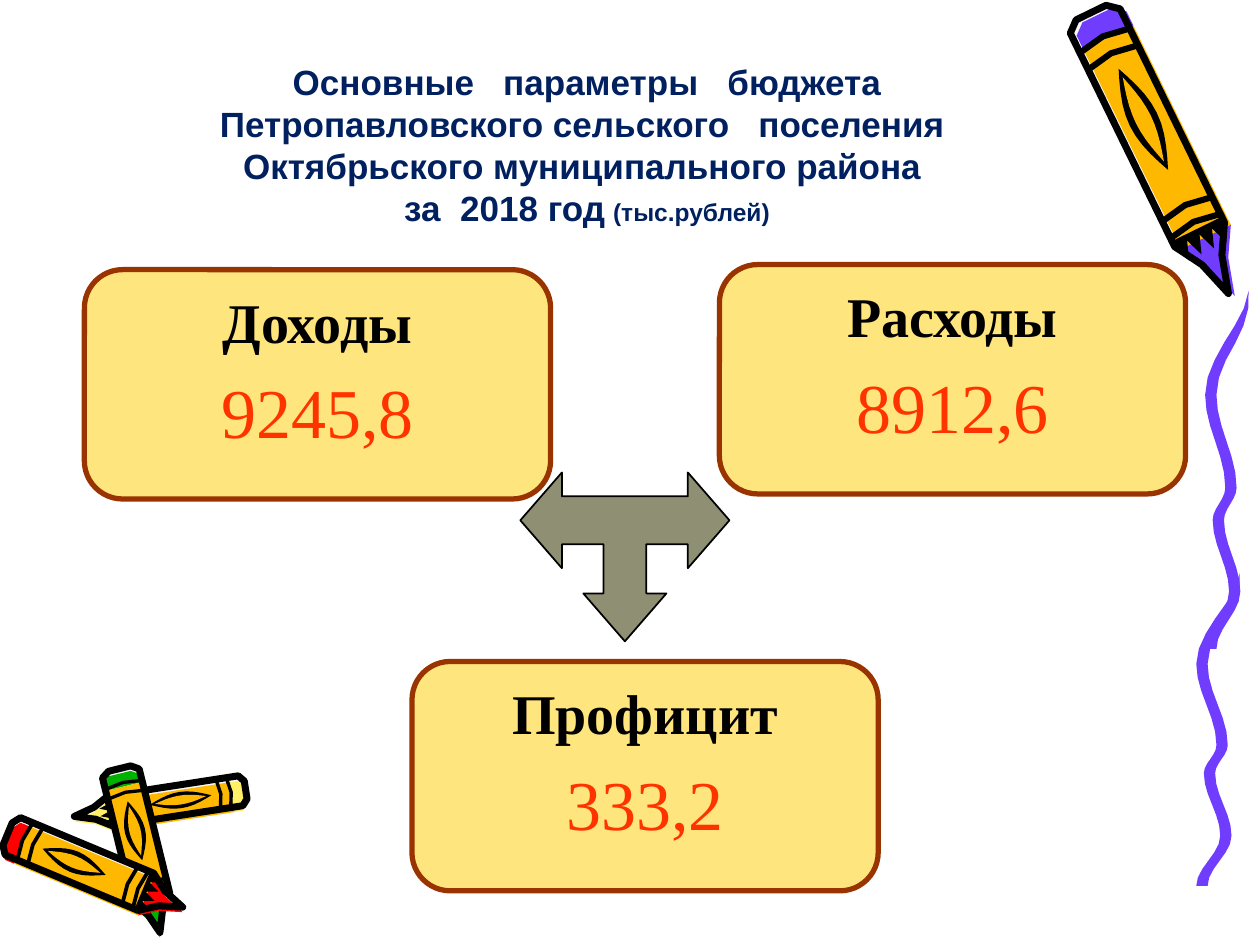
from math import cos, hypot, pi, sin

from lxml import etree
from pptx import Presentation
from pptx.dml.color import RGBColor
from pptx.enum.shapes import MSO_SHAPE
from pptx.enum.text import MSO_ANCHOR, PP_ALIGN
from pptx.oxml.ns import qn
from pptx.util import Inches, Pt

ROUND_RECT = MSO_SHAPE.ROUNDED_RECTANGLE
CENTER = PP_ALIGN.CENTER
TOP, BOTTOM = MSO_ANCHOR.TOP, MSO_ANCHOR.BOTTOM

BLACK = RGBColor(0x00, 0x00, 0x00)
WHITE = RGBColor(0xF8, 0xF8, 0xF8)
PURPLE = RGBColor(0x70, 0x3D, 0xFF)
ORANGE = RGBColor(0xFF, 0xB8, 0x00)
CREAM = RGBColor(0xFF, 0xEF, 0x66)
RED = RGBColor(0xFF, 0x00, 0x00)
GREEN = RGBColor(0x00, 0xB2, 0x00)
NAVY = RGBColor(0x00, 0x20, 0x60)
GOLD = RGBColor(0xFF, 0xCC, 0x00)
BROWN = RGBColor(0x99, 0x33, 0x00)
SCARLET = RGBColor(0xFF, 0x33, 0x00)
OLIVE = RGBColor(0x33, 0x33, 0x00)

TITLE_LINES = [
    "Основные   параметры   бюджета",
    "Петропавловского сельского   поселения  Октябрьского муниципального района ",
    "за  2018 год",
]

# Crayon parts: share of the length from the tail, share of the width from the axis.
BARREL_START, BARREL_END = 0.08, 0.79
BANDS = (0.09, 0.15, 0.69, 0.75)
LABEL_START, LABEL_LENGTH = 0.2, 0.36

# Squiggle turning points: share of the height, inches from the left edge.
TURNS = [(0, 0.35), (0.29, 0.05), (0.55, 0.21), (0.64, 0.11), (0.84, 0.24), (1, 0.05)]


def mirrored(half):
    """Close a half outline with its reflection across the axis (second value)."""
    return half + [(a, -c) for a, c in reversed(half)]


def crayon_band(a, bulge=0.015, thickness=0.02):
    near = [(a, -0.5), (a - bulge, 0), (a, 0.5)]
    return near + [(along + thickness, c) for along, c in reversed(near)]


def crayon_label(half_width, inset=0, steps=10):
    """Leaf shape that swells and narrows as a sine."""
    length = LABEL_LENGTH - 2 * inset
    return mirrored([(LABEL_START + inset + length * i / steps,
                      half_width * sin(pi * i / steps)) for i in range(steps + 1)])


def crayon_teeth(count=4, depth=0.06):
    """Zigzag shading where the barrel meets the nib."""
    steps = 2 * count
    edge = [(BARREL_END + depth * (i % 2), i / steps - 0.5) for i in range(steps + 1)]
    return edge + [(BARREL_END - 0.02, 0.5), (BARREL_END - 0.02, -0.5)]


CRAYON_TAIL = mirrored([(0, 0.3), (0.03, 0.5), (BARREL_START, 0.5)])
CRAYON_BARREL = mirrored([(BARREL_START, 0.5), (BARREL_END, 0.5)])
CRAYON_NIB = mirrored([(BARREL_END, 0.5), (0.88, 0.2), (1, 0)])
CRAYON_OUTLINE = mirrored([(0, 0.3), (0.03, 0.5), (BARREL_END, 0.5), (0.88, 0.2), (1, 0)])


class SlideBuilder:
    heading_font = "Arial"
    box_font = "Times New Roman"
    box_size = (3.7, 1.82)
    ink_width = 4

    def __init__(self, slide):
        self.shapes = slide.shapes

    def paint(self, sp, fill=None, alpha=None, line=None, width=1):
        """Set fill, outline and optional fill opacity in percent."""
        sp.shadow.inherit = False
        if fill is None:
            sp.fill.background()
        else:
            sp.fill.solid()
            sp.fill.fore_color.rgb = fill
        if alpha:
            color = sp.fill._xPr.find(qn("a:solidFill"))[0]
            etree.SubElement(color, qn("a:alpha"), val=str(alpha * 1000))
        if line is None:
            sp.line.fill.background()
        else:
            sp.line.color.rgb = line
            sp.line.width = Pt(width)

    def outline(self, points, **style):
        start, *rest = [(Inches(x), Inches(y)) for x, y in points]
        fb = self.shapes.build_freeform(*start)
        fb.add_line_segments(rest, close=True)
        self.paint(fb.convert_to_shape(), **style)

    def crayon(self, tail, tip, width, color, shift):
        """Draw a crayon whose colours sit off its ink outline by shift."""
        (x0, y0), (x1, y1) = tail, tip
        dx, dy = x1 - x0, y1 - y0
        across = width / hypot(dx, dy)

        def place(part, offset=(0, 0)):
            return [(x0 + a * dx - c * across * dy + offset[0],
                     y0 + a * dy + c * across * dx + offset[1]) for a, c in part]

        self.outline(place(CRAYON_OUTLINE), fill=WHITE)
        for part, fill in ((CRAYON_TAIL, color), (CRAYON_BARREL, ORANGE), (CRAYON_NIB, color)):
            self.outline(place(part, shift), fill=fill)
        for part in (*map(crayon_band, BANDS), crayon_teeth(), crayon_label(0.27)):
            self.outline(place(part), fill=BLACK)
        self.outline(place(crayon_label(0.15, inset=0.03)), fill=ORANGE)
        self.outline(place(CRAYON_OUTLINE), line=BLACK, width=self.ink_width)

    def squiggle(self, left, top, height, half_width=0.045, steps=6):
        """Draw a ribbon that eases between the turning points and starts as a point."""
        middle = []
        for (t0, x0), (t1, x1) in zip(TURNS, TURNS[1:]):
            for i in range(steps):
                ease = (1 - cos(pi * i / steps)) / 2
                middle.append((t0 + (t1 - t0) * i / steps, x0 + (x1 - x0) * ease))
        middle.append(TURNS[-1])

        def edge(side):
            return [(left + x + side * half_width * min(1, 8 * t), top + height * t)
                    for t, x in middle]

        self.outline(edge(-1) + edge(1)[::-1], fill=PURPLE)

    def three_way_arrow(self, center, top):
        """Draw an arrow pointing left, right and down, symmetric about its centre."""
        arm, head, reach = 0.5, 0.38, 0.83
        stem, stem_head, bottom = 0.17, 0.33, 1.34
        right = [(bottom, 0), (bottom - head, stem_head), (bottom - head, stem),
                 (head * 1.5, stem), (head * 1.5, arm), (head * 2, arm),
                 (head, reach), (0, arm), (head / 2, arm)]
        self.outline([(center + x, top + y) for y, x in mirrored(right)],
                     fill=OLIVE, alpha=55, line=BLACK)

    def run(self, p, text, font, size, color, bold):
        r = p.add_run()
        r.text = text
        r.font.name = font
        r.font.size = Pt(size)
        r.font.color.rgb = color
        r.font.bold = bold

    def title(self, x, y, w, h, lines, unit):
        tf = self.shapes.add_textbox(*map(Inches, (x, y, w, h))).text_frame
        tf.word_wrap = True
        tf.vertical_anchor = BOTTOM
        p = tf.paragraphs[0]
        p.alignment = CENTER
        for i, text in enumerate(lines):
            if i:
                p.add_line_break()
            self.run(p, text, self.heading_font, 20, NAVY, True)
        for text, size in ((" ", 16), (unit, 14)):
            self.run(p, text, self.heading_font, size, NAVY, True)

    def amount_box(self, x, y, label, amount):
        sp = self.shapes.add_shape(ROUND_RECT, *map(Inches, (x, y, *self.box_size)))
        self.paint(sp, fill=GOLD, alpha=51, line=BROWN, width=3)
        tf = sp.text_frame
        tf.word_wrap = True
        tf.vertical_anchor = TOP
        rows = [(label, 32, BLACK, True), (amount, 40, SCARLET, False)]
        for i, (text, size, color, bold) in enumerate(rows):
            p = tf.add_paragraph() if i else tf.paragraphs[0]
            p.alignment = CENTER
            p.space_before = Pt(size * 0.2)
            self.run(p, text, self.box_font, size, color, bold)


def main():
    prs = Presentation()
    prs.slide_width, prs.slide_height = Inches(10), Inches(7.5)
    s = SlideBuilder(prs.slides.add_slide(prs.slide_layouts[6]))

    s.crayon((1.95, 6.27), (0.59, 6.48), 0.24, CREAM, shift=(0, 0.04))
    s.crayon((0.95, 6.1), (1.27, 7.4), 0.3, GREEN, shift=(0, 0.04))
    s.crayon((0.06, 6.62), (1.45, 7.2), 0.32, RED, shift=(0, 0.04))
    s.squiggle(9.49, 4.55, 2.48)
    s.squiggle(9.56, 2.31, 2.84)
    s.crayon((8.66, 0.1), (9.75, 2.33), 0.44, PURPLE, shift=(0.05, 0.02))

    s.title(1.06, 0.21, 7.2, 1.65, TITLE_LINES, "(тыс.рублей)")
    s.amount_box(0.67, 2.14, "Доходы", "9245,8")
    s.amount_box(5.71, 2.1, "Расходы", "8912,6")
    s.three_way_arrow(4.96, 3.75)
    s.amount_box(3.27, 5.25, "Профицит", "333,2")

    prs.save("out.pptx")


if __name__ == "__main__":
    main()
